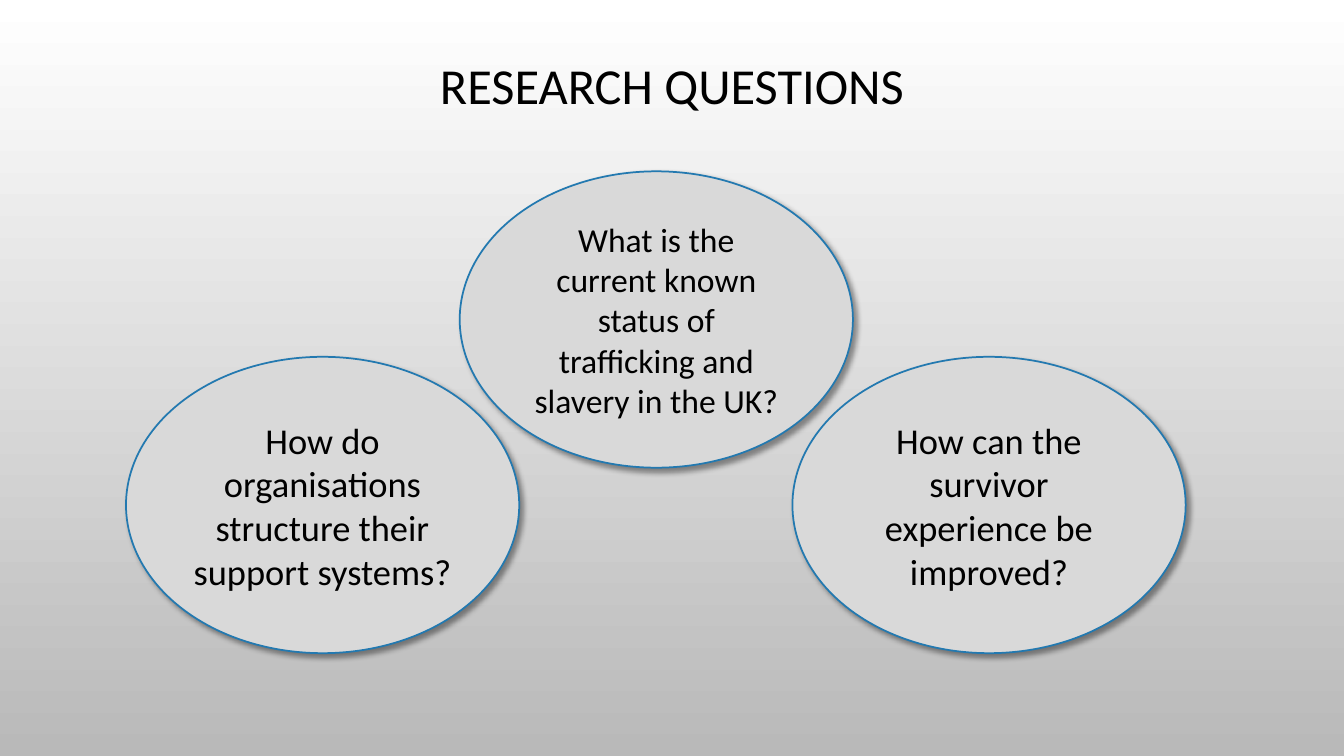
import pptx
import pptx.util
import pptx.dml.color
import pptx.enum.shapes
import pptx.enum.text
import pptx.oxml
import pptx.oxml.ns

Inches = pptx.util.Inches
Pt = pptx.util.Pt
RGBColor = pptx.dml.color.RGBColor

WHITE = RGBColor(0xFF, 0xFF, 0xFF)
BACKGROUND_GREY = RGBColor(0xB9, 0xB9, 0xB9)
BUBBLE_GREY = RGBColor(0xD9, 0xD9, 0xD9)
OUTLINE_BLUE = RGBColor(0x23, 0x79, 0xB0)
BLACK = RGBColor(0, 0, 0)

SHADOW_XML = (
    f'<a:effectLst {pptx.oxml.ns.nsdecls("a")}>'
    f'<a:outerShdw blurRad="{Pt(4)}" dist="{Pt(3)}" dir="2700000" algn="tl" rotWithShape="0">'
    '<a:srgbClr val="000000"><a:alpha val="40000"/></a:srgbClr>'
    '</a:outerShdw></a:effectLst>'
)


def write_text(holder, text, size, inset=0.1, line_spacing=1.0):
    frame = holder.text_frame
    frame.word_wrap = True
    frame.vertical_anchor = pptx.enum.text.MSO_ANCHOR.MIDDLE
    frame.margin_left = frame.margin_right = Inches(inset)
    paragraph = frame.paragraphs[0]
    paragraph.alignment = pptx.enum.text.PP_ALIGN.CENTER
    paragraph.line_spacing = line_spacing
    run = paragraph.add_run()
    run.text = text
    run.font.name = "Calibri"
    run.font.size = Pt(size)
    run.font.color.rgb = BLACK


presentation = pptx.Presentation()
presentation.slide_width = Inches(13.33)
presentation.slide_height = Inches(7.5)
slide = presentation.slides.add_slide(presentation.slide_layouts[6])

backdrop = slide.background.fill
backdrop.gradient()
backdrop.gradient_angle = 270
for stop, color, position in zip(backdrop.gradient_stops, (WHITE, BACKGROUND_GREY), (0, 1)):
    stop.color.rgb = color
    stop.position = position

heading = slide.shapes.add_textbox(Inches(1), Inches(0), Inches(11.33), Inches(1.75))
write_text(heading, "RESEARCH QUESTIONS", size=36, line_spacing=0.9)

questions = [
    (1.25, 3.54, 26, "How do organisations structure their support systems?"),
    (4.56, 1.7, 24, "What is the current known status of trafficking and slavery in the UK?"),
    (7.86, 3.54, 26, "How can the survivor experience be improved?"),
]
for left, top, size, question in questions:
    bubble = slide.shapes.add_shape(
        pptx.enum.shapes.MSO_SHAPE.OVAL,
        Inches(left), Inches(top), Inches(3.9), Inches(2.94),
    )
    bubble.fill.solid()
    bubble.fill.fore_color.rgb = BUBBLE_GREY
    bubble.line.color.rgb = OUTLINE_BLUE
    bubble.line.width = Pt(1.25)
    bubble.element.spPr.append(pptx.oxml.parse_xml(SHADOW_XML))
    write_text(bubble, question, size=size, inset=0.09)

presentation.save("out.pptx")
